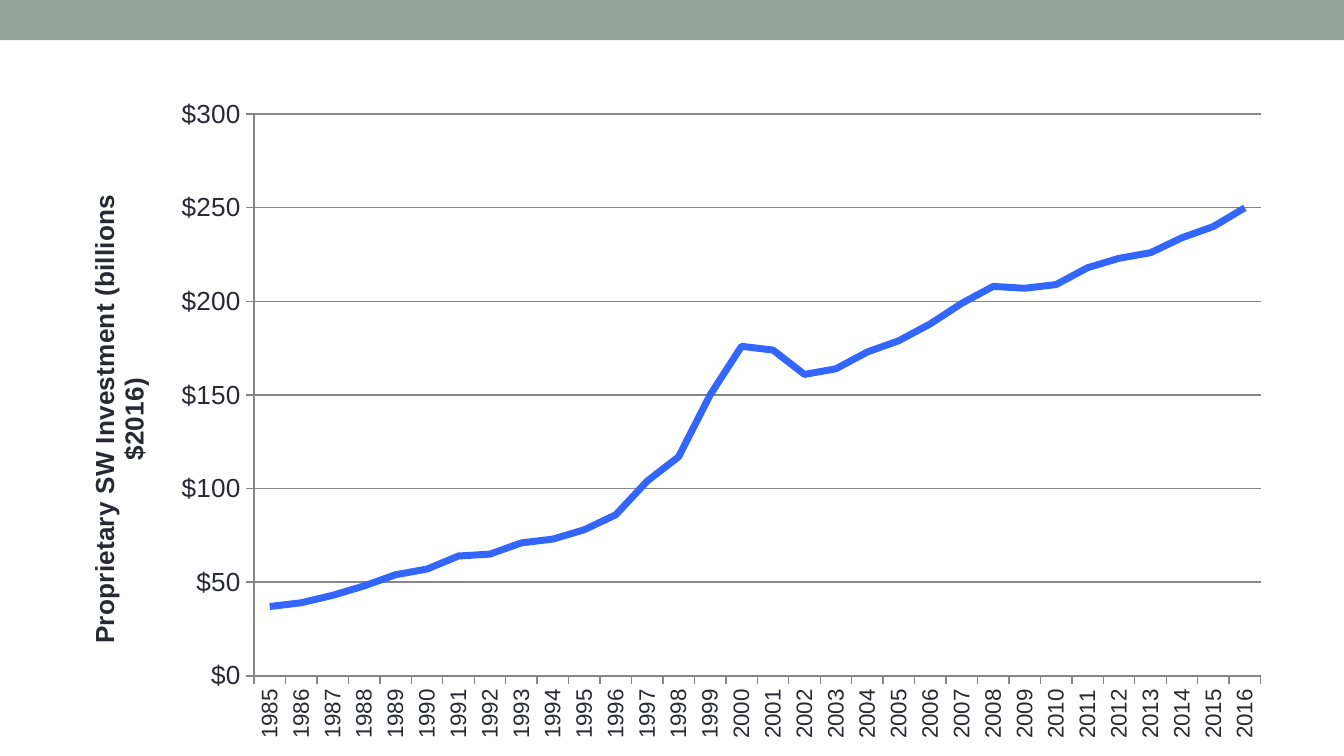
from dataclasses import dataclass
from lxml import etree
from pptx import Presentation
from pptx.chart.data import CategoryChartData as ChartData
from pptx.dml.color import RGBColor as RGB
from pptx.enum.chart import XL_CHART_TYPE as ChartType, XL_MARKER_STYLE as Marker, XL_TICK_MARK as Tick
from pptx.enum.shapes import MSO_SHAPE as Shape
from pptx.oxml.ns import qn
from pptx.util import Inches, Pt


@dataclass
class Theme:
    band: RGB = RGB.from_string("93A299")
    text: RGB = RGB.from_string("292934")
    line: RGB = RGB.from_string("3366FF")
    grid: RGB = RGB.from_string("868686")
    font: str = "Arial"
    base: int = 10
    years: int = 12
    values: int = 14


theme = Theme()


def format_text(font, size, bold=False):
    font.name = theme.font
    font.size = Pt(size)
    font.bold = bold
    font.color.rgb = theme.text


prs = Presentation()
prs.slide_width = Inches(10)
prs.slide_height = Inches(10 * 9 / 16)
s = prs.slides.add_slide(prs.slide_layouts[6])

band = s.shapes.add_shape(Shape.RECTANGLE, 0, 0, prs.slide_width, Inches(0.3))
band.shadow.inherit = False
band.fill.solid()
band.fill.fore_color.rgb = theme.band
band.line.fill.background()

investment = [37, 39, 43, 48, 54, 57, 64, 65, 71, 73, 78, 86, 104, 117, 150, 176,
              174, 161, 164, 173, 179, 188, 199, 208, 207, 209, 218, 223, 226, 234, 240, 250]
data = ChartData()
data.categories = [str(1985 + i) for i in range(len(investment))]
data.add_series("Series 1", investment)

left, top, width, height = 0.44, 0.64, 9.13, 4.95
chart = s.shapes.add_chart(ChartType.LINE, Inches(left), Inches(top),
                           Inches(width), Inches(height), data).chart
chart.has_legend = False
chart.has_title = False
format_text(chart.font, theme.base)

plot = chart.plots[0]
plot.vary_by_categories = False
series = plot.series[0]
series.smooth = False
series.marker.style = Marker.NONE
series.format.line.color.rgb = theme.line
series.format.line.width = Pt(3.75)

years, dollars = chart.category_axis, chart.value_axis
for axis, size in ((years, theme.years), (dollars, theme.values)):
    format_text(axis.tick_labels.font, size)
    axis.major_tick_mark = Tick.OUTSIDE
    axis.minor_tick_mark = Tick.NONE
    axis.format.line.color.rgb = theme.grid
    axis.format.line.width = Pt(0.75)

years.has_major_gridlines = False
label_body = years._element.find(qn("c:txPr")).find(qn("a:bodyPr"))
label_body.set("rot", "-5400000")
label_body.set("vert", "horz")

dollars.minimum_scale, dollars.maximum_scale, dollars.major_unit = 0, 300, 50
dollars.tick_labels.number_format = '"$"#,##0'
dollars.tick_labels.number_format_is_linked = False
dollars.has_major_gridlines = True
dollars.major_gridlines.format.line.color.rgb = theme.grid
dollars.major_gridlines.format.line.width = Pt(0.75)

tf = dollars.axis_title.text_frame
r = tf.paragraphs[0].add_run()
r.text = "Proprietary SW Investment (billions $2016)"
format_text(r.font, theme.values, bold=True)
title_body = tf._txBody.find(qn("a:bodyPr"))
title_body.set("rot", "-5400000")
title_body.set("vert", "horz")

plot_area = chart._chartSpace.chart.plotArea
for old in plot_area.findall(qn("c:layout")):
    plot_area.remove(old)
layout = etree.Element(qn("c:layout"))
manual = etree.SubElement(layout, qn("c:manualLayout"))
for tag, value in (("layoutTarget", "inner"), ("xMode", "edge"), ("yMode", "edge"),
                   ("x", (1.89 - left) / width), ("y", (0.85 - top) / height),
                   ("w", 7.49 / width), ("h", 4.18 / height)):
    etree.SubElement(manual, qn(f"c:{tag}")).set("val", str(value))
plot_area.insert(0, layout)

prs.save("out.pptx")
